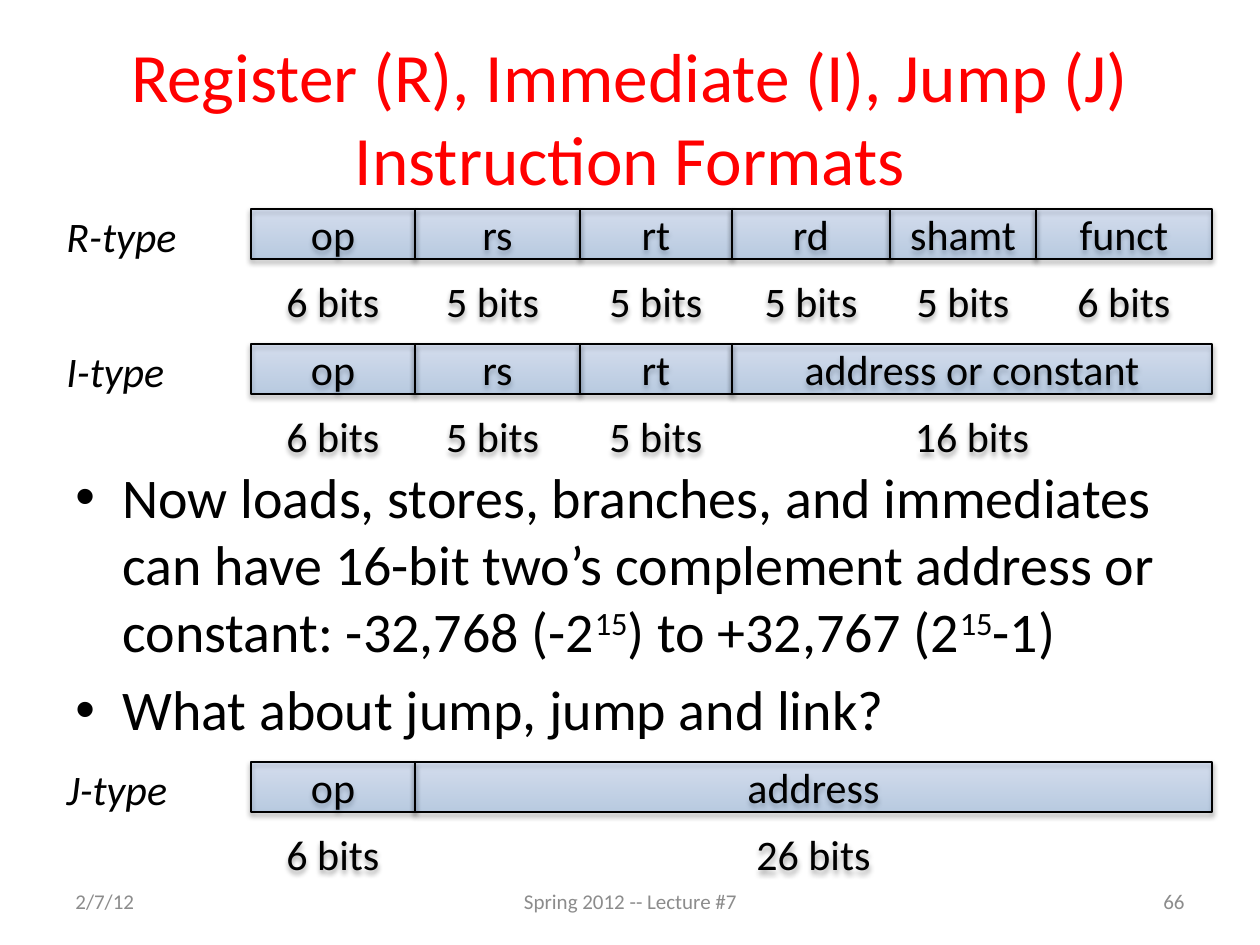
from typing import NamedTuple

from lxml.etree import SubElement
from pptx import Presentation
from pptx.dml.color import RGBColor
from pptx.enum.shapes import MSO_SHAPE
from pptx.enum.text import MSO_ANCHOR, PP_ALIGN
from pptx.oxml.ns import qn
from pptx.util import Pt

PX = 914400 / 126
FONT = "Calibri"
COLORS = {
    "title": "FF0000",
    "text": "000000",
    "footer": "8C8C8C",
    "line": "000000",
    "shadow": "000000",
    "fill_bottom": "3F80CE",
    "fill_top": "A4C4FF",
}
EDGES = [251, 415, 580, 732, 890, 1036, 1212]
CELL_H = 50
BITS_DROP = 67


class Field(NamedTuple):
    name: str
    bits: str
    span: int = 1


class Format(NamedTuple):
    label: str
    top: int
    fields: list[Field]


FORMATS = [
    Format("R-type", 209, [
        Field("op", "6 bits"), Field("rs", "5 bits "), Field("rt", "5 bits"),
        Field("rd", "5 bits"), Field("shamt", "5 bits"), Field("funct", "6 bits"),
    ]),
    Format("I-type", 344, [
        Field("op", "6 bits"), Field("rs", "5 bits "), Field("rt", "5 bits"),
        Field("address or constant", "16 bits", 3),
    ]),
    Format("J-type", 762, [Field("op", "6 bits"), Field("address", "26 bits", 5)]),
]
BULLETS = [
    [("Now loads, stores, branches, and immediates can have 16-bit two’s "
      "complement address or constant: -32,768 (-2", 0), ("15", 30),
     (") to +32,767 (2", 0), ("15", 30), ("-1)", 0)],
    [("What about jump, jump and link?", 0)],
]


def emu(*lengths: int) -> list[int]:
    return [round(n * PX) for n in lengths]


def add_run(p, text: str, size: float, color: str, italic=False, raised=0) -> None:
    r = p.add_run()
    r.text = text
    r.font.name, r.font.size = FONT, Pt(size)
    r.font.color.rgb = RGBColor.from_string(COLORS[color])
    if italic:
        r.font.italic = True
    if raised:
        r.font._element.set("baseline", str(raised * 1000))


def put_text(sp, text: str, size: float = 24, color: str = "text",
             align=PP_ALIGN.CENTER, anchor=MSO_ANCHOR.MIDDLE,
             italic: bool = False, wrap: bool = True) -> None:
    tf = sp.text_frame
    tf.word_wrap, tf.vertical_anchor = wrap, anchor
    p = tf.paragraphs[0]
    p.alignment = align
    add_run(p, text, size, color, italic)


def add_shadow(sp) -> None:
    sp.shadow.inherit = False
    effects = sp._element.spPr.find(qn("a:effectLst"))
    shadow = SubElement(effects, qn("a:outerShdw"), blurRad=str(Pt(3.1)),
                        dist=str(Pt(1.8)), dir="5400000", rotWithShape="0")
    clr = SubElement(shadow, qn("a:srgbClr"), val=COLORS["shadow"])
    SubElement(clr, qn("a:alpha"), val="35000")


def style_cell(sp) -> None:
    """Give a field its translucent vertical gradient, outline and shadow."""
    sp.fill.gradient()
    sp.fill.gradient_angle = 90
    for stop, key, pos in zip(sp.fill.gradient_stops, ("fill_bottom", "fill_top"), (0, 1)):
        stop.position = pos
        stop.color.rgb = RGBColor.from_string(COLORS[key])
    for clr in sp._element.spPr.iter(qn("a:srgbClr")):
        SubElement(clr, qn("a:alpha"), val="27000")
    sp.line.color.rgb = RGBColor.from_string(COLORS["line"])
    sp.line.width = Pt(1.5)
    add_shadow(sp)


def draw_format(shapes, fmt: Format) -> None:
    col = 0
    for field in fmt.fields:
        left, right = EDGES[col], EDGES[col + field.span]
        col += field.span
        cell = shapes.add_shape(MSO_SHAPE.RECTANGLE,
                                *emu(left, fmt.top, right - left, CELL_H))
        style_cell(cell)
        put_text(cell, field.name)
        bits = shapes.add_textbox(
            *emu(left, fmt.top + BITS_DROP, right - left, CELL_H))
        add_shadow(bits)
        put_text(bits, field.bits)
    label = shapes.add_textbox(*emu(54, fmt.top - 5, 148, 63))
    put_text(label, fmt.label, align=PP_ALIGN.LEFT, anchor=MSO_ANCHOR.TOP,
             italic=True, wrap=False)


def draw_bullets(shapes) -> None:
    tf = shapes.add_textbox(*emu(63, 456, 1173, 378)).text_frame
    tf.word_wrap = True
    indent = emu(47)[0]
    for i, runs in enumerate(BULLETS):
        p = tf.add_paragraph() if i else tf.paragraphs[0]
        p.space_before = Pt(6.4)
        pPr = p._p.get_or_add_pPr()
        pPr.set("marL", str(indent))
        pPr.set("indent", str(-indent))
        SubElement(pPr, qn("a:buFont"), typeface="Arial")
        SubElement(pPr, qn("a:buChar"), char="•")
        for text, raised in runs:
            add_run(p, text, 32, "text", raised=raised)


def main() -> None:
    prs = Presentation()
    prs.slide_width, prs.slide_height = emu(1260, 945)
    shapes = prs.slides.add_slide(prs.slide_layouts[6]).shapes

    title = shapes.add_textbox(*emu(63, 38, 1134, 157))
    put_text(title, "Register (R), Immediate (I), Jump (J) Instruction Formats",
             size=39.6, color="title")
    draw_bullets(shapes)
    for left, width, text, align in [
        (63, 294, "2/7/12", PP_ALIGN.LEFT),
        (431, 399, "Spring 2012 -- Lecture #7", PP_ALIGN.CENTER),
        (903, 294, "66", PP_ALIGN.RIGHT),
    ]:
        put_text(shapes.add_textbox(*emu(left, 876, width, 50)), text,
                 size=12, color="footer", align=align)
    for fmt in FORMATS:
        draw_format(shapes.add_group_shape().shapes, fmt)
    prs.save("out.pptx")


if __name__ == "__main__":
    main()
